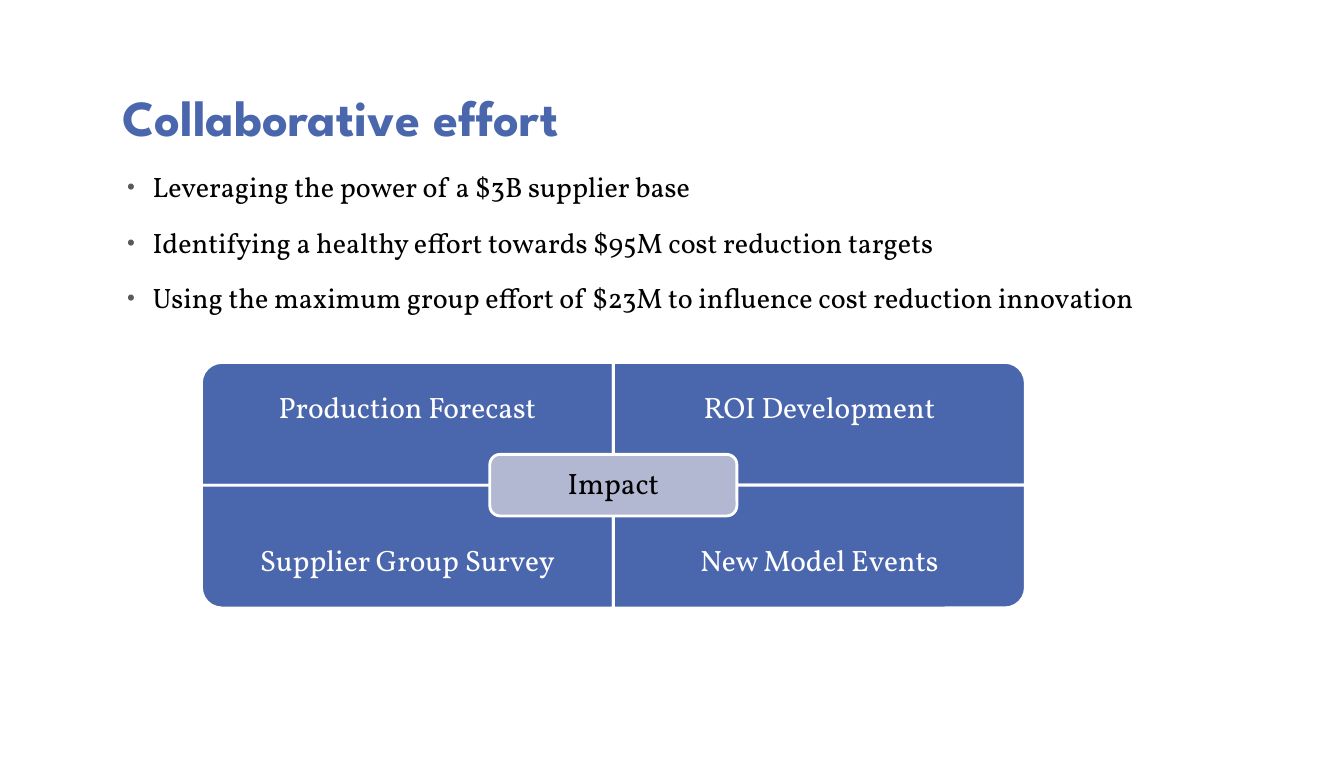
from lxml.etree import SubElement
from pptx import Presentation
from pptx.dml.color import RGBColor
from pptx.enum.shapes import MSO_SHAPE
from pptx.enum.text import MSO_ANCHOR, MSO_AUTO_SIZE, PP_ALIGN
from pptx.oxml.ns import qn
from pptx.util import Cm, Pt

BLUE, PALE_BLUE, GREY = "4A66AC", "B2B8D2", "595959"
WHITE, BLACK = "FFFFFF", "000000"


def color(hex_string):
    return RGBColor.from_string(hex_string)


class SlideBuilder:
    heading_font = "League Spartan"
    body_font = "Vollkorn"

    def __init__(self, presentation):
        self.slide = presentation.slides.add_slide(presentation.slide_layouts[1])

    def place(self, shape, left, top, width, height):
        shape.left, shape.top = Cm(left), Cm(top)
        shape.width, shape.height = Cm(width), Cm(height)

    def set_frame(self, shape, anchor, inset):
        frame = shape.text_frame
        frame.word_wrap = True
        frame.auto_size = MSO_AUTO_SIZE.NONE
        frame.vertical_anchor = anchor
        frame.margin_left = frame.margin_right = Cm(inset)
        frame.margin_top = frame.margin_bottom = Cm(inset)
        return frame

    def add_run(self, paragraph, text, font_name, size, hex_string, bold=False):
        run = paragraph.add_run()
        run.text = text
        run.font.name = font_name
        run.font.size = Pt(size)
        run.font.bold = bold
        run.font.color.rgb = color(hex_string)

    def title(self, text, box):
        shape = self.slide.shapes.title
        self.place(shape, *box)
        paragraph = self.set_frame(shape, MSO_ANCHOR.BOTTOM, 0.13).paragraphs[0]
        paragraph.alignment = PP_ALIGN.LEFT
        paragraph.line_spacing = 0.8
        self.add_run(paragraph, text, self.heading_font, 36, BLUE, bold=True)

    def bullet_list(self, items, box):
        shape = self.slide.placeholders[1]
        self.place(shape, *box)
        frame = self.set_frame(shape, MSO_ANCHOR.TOP, 0.13)
        for index, item in enumerate(items):
            paragraph = frame.add_paragraph() if index else frame.paragraphs[0]
            paragraph.line_spacing = 0.9
            paragraph.space_before = Pt(18 if index else 0)
            self.add_bullet(paragraph)
            self.add_run(paragraph, item, self.body_font, 20, BLACK)

    def add_bullet(self, paragraph):
        properties = paragraph._p.get_or_add_pPr()
        properties.set("marL", str(Cm(0.76)))
        properties.set("indent", str(-Cm(0.64)))
        bullet_color = SubElement(properties, qn("a:buClr"))
        SubElement(bullet_color, qn("a:srgbClr"), val=GREY)
        SubElement(properties, qn("a:buSzPct"), val="80000")
        SubElement(properties, qn("a:buFont"), typeface="Arial")
        SubElement(properties, qn("a:buChar"), char="•")

    def panel(self, kind, box, fill, rotation=0):
        shape = self.slide.shapes.add_shape(kind, *map(Cm, box))
        shape.rotation = rotation
        shape.shadow.inherit = False
        shape.fill.solid()
        shape.fill.fore_color.rgb = color(fill)
        shape.line.color.rgb = color(WHITE)
        shape.line.width = Pt(2)
        return shape

    def quadrant(self, box, rotation):
        left, top, width, height = box
        if rotation % 180:
            # A quarter turn swaps the sides around the same centre
            left += (width - height) / 2
            top += (height - width) / 2
            width, height = height, width
        self.panel(MSO_SHAPE.ROUND_1_RECTANGLE, (left, top, width, height), BLUE, rotation)

    def text_box(self, text, box):
        self.label(self.slide.shapes.add_textbox(*map(Cm, box)), text, WHITE, 0.4)

    def label(self, shape, text, hex_string, inset):
        paragraph = self.set_frame(shape, MSO_ANCHOR.MIDDLE, inset).paragraphs[0]
        paragraph.alignment = PP_ALIGN.CENTER
        paragraph.line_spacing = 0.9
        self.add_run(paragraph, text, self.body_font, 21, hex_string)


def main():
    presentation = Presentation()
    presentation.slide_width, presentation.slide_height = Cm(33.83), Cm(19.05)
    builder = SlideBuilder(presentation)

    # Title and list
    builder.title("Collaborative effort", (2.95, 1.7, 24.13, 2.11))
    builder.bullet_list([
        "Leveraging the power of a $3B supplier base",
        "Identifying a healthy effort towards $95M cost reduction targets",
        "Using the maximum group effort of $23M to influence cost reduction innovation",
    ], (2.95, 4.24, 26.24, 4.45))

    # Four quadrants, each with its rounded corner turned outwards
    left, top, width, height, label_height = 5.07, 9.12, 10.37, 3.09, 2.33
    quadrants = [
        ("Production Forecast", 270), ("ROI Development", 0),
        ("Supplier Group Survey", 180), ("New Model Events", 90),
    ]
    for index, (text, rotation) in enumerate(quadrants):
        row, column = divmod(index, 2)
        x, y = left + column * width, top + row * height
        builder.quadrant((x, y, width, height), rotation)
        label_top = y + row * (height - label_height)
        builder.text_box(text, (x, label_top, width, label_height))

    # Centre panel
    center_width, center_height = 6.22, 1.55
    center_box = (left + width - center_width / 2, top + height - center_height / 2,
                  center_width, center_height)
    center = builder.panel(MSO_SHAPE.ROUNDED_RECTANGLE, center_box, PALE_BLUE)
    builder.label(center, "Impact", BLACK, 0.23)

    presentation.save("out.pptx")


if __name__ == "__main__":
    main()
